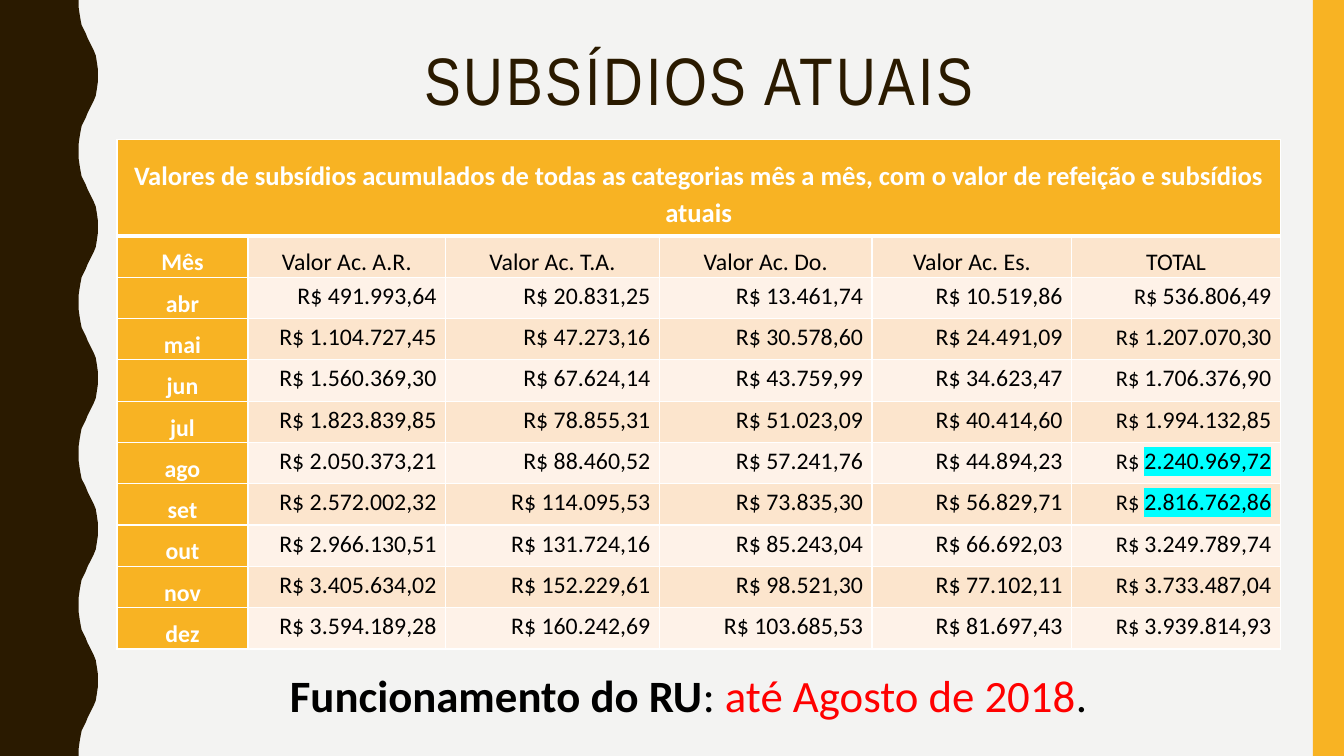
from lxml import etree
from pptx import Presentation
from pptx import util as u
from pptx.dml.color import RGBColor
from pptx.enum import shapes, text
from pptx.oxml.ns import qn

COLORS = {"paper": "F3F3F2", "brown": "2A1A00", "gold": "F8B323", "white": "FFFFFF",
          "black": "000000", "red": "FF0000", "cyan": "00FFFF",
          "peach": "FCE5CD", "cream": "FEF2E8"}
GRID_COLS, GRID_ROWS = 1333, 750
UNIT = u.Inches(0.01)
HALF_WAVE = [(78, 0), (78, 7), (79, 14), (80, 20), (81, 25), (83, 29), (85, 33), (87, 38),
             (89, 42), (91, 46), (93, 50), (95, 55), (96, 61), (97, 68), (97, 75)]
PERIOD, WAVES = 150, 5
COLUMN_SHARES = [130, 196, 212, 211, 198, 207]
BANNER_ROWS, MONTH_ROWS = 96, 41
BANNER = ("Valores de subsídios acumulados de todas as categorias mês a mês, "
          "com o valor de refeição e subsídios atuais")
HEADINGS = ["Mês", "Valor Ac. A.R.", "Valor Ac. T.A.", "Valor Ac. Do.", "Valor Ac. Es.", "TOTAL"]
SUBSIDIES = [
    ["abr", "491.993,64", "20.831,25", "13.461,74", "10.519,86", "536.806,49"],
    ["mai", "1.104.727,45", "47.273,16", "30.578,60", "24.491,09", "1.207.070,30"],
    ["jun", "1.560.369,30", "67.624,14", "43.759,99", "34.623,47", "1.706.376,90"],
    ["jul", "1.823.839,85", "78.855,31", "51.023,09", "40.414,60", "1.994.132,85"],
    ["ago", "2.050.373,21", "88.460,52", "57.241,76", "44.894,23", "2.240.969,72"],
    ["set", "2.572.002,32", "114.095,53", "73.835,30", "56.829,71", "2.816.762,86"],
    ["out", "2.966.130,51", "131.724,16", "85.243,04", "66.692,03", "3.249.789,74"],
    ["nov", "3.405.634,02", "152.229,61", "98.521,30", "77.102,11", "3.733.487,04"],
    ["dez", "3.594.189,28", "160.242,69", "103.685,53", "81.697,43", "3.939.814,93"],
]
MARKED_MONTHS = ("ago", "set")


def rgb(name):
    """Return the named colour."""
    return RGBColor.from_string(COLORS[name])


def place(box):
    """Turn a box in grid units into slide lengths."""
    return [UNIT * part for part in box]


def write(paragraph, words, size=17, color="black", bold=False, font="Calibri",
          spacing=None, highlight=None):
    """Add a formatted run to a paragraph."""
    run = paragraph.add_run()
    run.text = words
    run.font.size, run.font.bold = u.Pt(size), bold
    run.font.color.rgb = rgb(color)
    run.font.name = font
    properties = run.font._element
    if spacing:
        properties.set("spc", str(spacing * 100))
    if highlight:
        marker = etree.Element(qn("a:highlight"))
        etree.SubElement(marker, qn("a:srgbClr"), val=COLORS[highlight])
        properties.find(qn("a:solidFill")).addnext(marker)


def paint(shape, color):
    """Give a shape a plain fill without line or shadow."""
    shape.shadow.inherit = False
    shape.fill.solid()
    shape.fill.fore_color.rgb = rgb(color)
    shape.line.fill.background()


def draw_edges(slide, box):
    """Draw the wavy left edge and the gold right edge of a box."""
    left, top, width, height = box
    down_wave = HALF_WAVE + [(x, PERIOD - y) for x, y in HALF_WAVE[-2::-1]]
    edge = [(left + x, top + y + PERIOD * wave) for wave in range(WAVES) for x, y in down_wave]
    outline = slide.shapes.build_freeform(left, top, scale=UNIT)
    outline.add_line_segments(edge + [(left, top + height)], close=True)
    paint(outline.convert_to_shape(), "brown")
    stripe = 31
    paint(slide.shapes.add_shape(shapes.MSO_SHAPE.RECTANGLE,
                                 *place((left + width - stripe, top, stripe, height))), "gold")


def centred_line(slide, box):
    """Add a wrapping text box and return its centred paragraph."""
    frame = slide.shapes.add_textbox(*place(box)).text_frame
    frame.word_wrap = True
    paragraph = frame.paragraphs[0]
    paragraph.alignment = text.PP_ALIGN.CENTER
    return paragraph


def draw_title(slide, box):
    """Write the slide title at the top of a box."""
    title = centred_line(slide, box)
    title.line_spacing = 0.9
    write(title, "SUBSÍDIOS ATUAIS", size=48, color="brown", font="Arial Narrow", spacing=2)


def draw_closing(slide, box):
    """Write the closing statement in a box."""
    closing = centred_line(slide, box)
    for words, color, bold in [("Funcionamento do RU", "black", True), (": ", "black", False),
                               ("até Agosto de 2018", "red", False), (".", "black", False)]:
        write(closing, words, size=32, color=color, bold=bold)


def format_cell(cell, fill, align="CENTER", anchor="BOTTOM", inset=(0.09, 0), top=1, bottom=1):
    """Set fill, margins and white borders of a cell and return its paragraph."""
    cell.margin_left = cell.margin_right = u.Inches(inset[0])
    cell.margin_top = cell.margin_bottom = u.Inches(inset[1])
    cell.vertical_anchor = getattr(text.MSO_ANCHOR, anchor)
    cell.fill.solid()
    cell.fill.fore_color.rgb = rgb(fill)
    sides = [("lnL", 1), ("lnR", 1), ("lnT", top), ("lnB", bottom)]
    for index, (side, weight) in enumerate(sides):
        border = etree.Element(qn("a:" + side), w=str(u.Pt(weight)))
        ink = etree.SubElement(border, qn("a:solidFill"))
        etree.SubElement(ink, qn("a:srgbClr"), val=COLORS["white"])
        cell._tc.tcPr.insert(index, border)
    paragraph = cell.text_frame.paragraphs[0]
    paragraph.alignment = getattr(text.PP_ALIGN, align)
    paragraph.line_spacing = 1.15
    return paragraph


def fill_month(table, row, values):
    """Fill one month row of the subsidy table."""
    month, *amounts = values
    write(format_cell(table.cell(row, 0), "gold"), month, color="white", bold=True)
    band = "peach" if row % 2 else "cream"
    for column, amount in enumerate(amounts, 1):
        paragraph = format_cell(table.cell(row, column), band, align="RIGHT", anchor="TOP")
        if column < len(amounts):
            write(paragraph, "R$ " + amount)
        else:
            write(paragraph, "R$ ", size=16)
            write(paragraph, amount, highlight="cyan" if month in MARKED_MONTHS else None)


def draw_subsidies(slide, box):
    """Build the monthly subsidy table in a box."""
    row_count = len(SUBSIDIES) + 2
    table = slide.shapes.add_table(row_count, len(HEADINGS), *place(box)).table
    for column, share in zip(table.columns, COLUMN_SHARES):
        column.width = int(UNIT * box[2] * share / sum(COLUMN_SHARES))
    for index, row in enumerate(table.rows):
        row.height = UNIT * (MONTH_ROWS if index else BANNER_ROWS)
    for column, heading in enumerate(HEADINGS):
        format_cell(table.cell(0, column), "gold", inset=(0.12, 0.06), bottom=3)
        first = column == 0
        paragraph = format_cell(table.cell(1, column), "gold" if first else "peach", top=3)
        write(paragraph, heading, color="white" if first else "black", bold=first)
    banner = table.cell(0, 0)
    banner.merge(table.cell(0, len(HEADINGS) - 1))
    write(banner.text_frame.paragraphs[0], BANNER, size=19, color="white", bold=True)
    for row, values in enumerate(SUBSIDIES, 2):
        fill_month(table, row, values)


def main():
    """Build and save the presentation."""
    deck = Presentation()
    deck.slide_width, deck.slide_height = UNIT * GRID_COLS, UNIT * GRID_ROWS
    slide = deck.slides.add_slide(deck.slide_layouts[6])
    slide.background.fill.solid()
    slide.background.fill.fore_color.rgb = rgb("paper")
    draw_edges(slide, (0, 0, GRID_COLS, GRID_ROWS))
    draw_title(slide, (137, 42, 1113, 163))
    draw_subsidies(slide, (116, 138, 1154, 506))
    draw_closing(slide, (116, 658, 1134, 64))
    deck.save("out.pptx")


if __name__ == "__main__":
    main()
